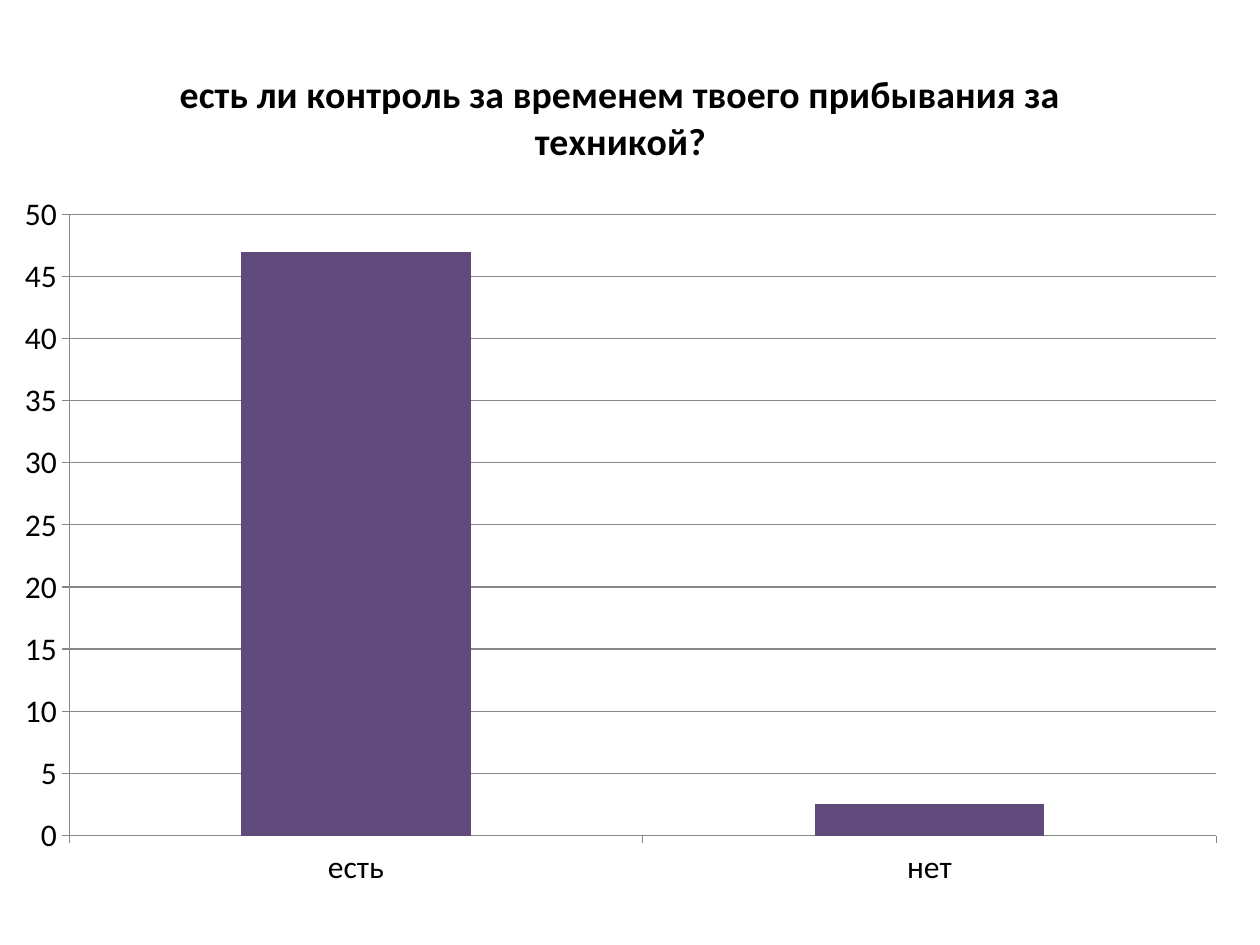
from dataclasses import dataclass

from pptx import Presentation
from pptx.chart.data import CategoryChartData
from pptx.dml.color import RGBColor
from pptx.enum.chart import XL_CHART_TYPE, XL_TICK_MARK
from pptx.util import Inches, Pt


@dataclass(frozen=True)
class Theme:
    """Hold the colours, font and type sizes."""
    face: str = "Calibri"
    ink: str = "000000"
    bar: str = "604A7B"
    grid: str = "868686"
    body: float = 18
    head: float = 21.6


THEME = Theme()
TITLE = "есть ли контроль за временем твоего прибывания за техникой?"
VOTES = {"есть": 47, "нет": 2.5}


def style(font, size=THEME.body, bold=False, color=THEME.ink):
    """Set the face, size, weight and colour of a font."""
    font.name = THEME.face
    font.size = Pt(size)
    font.bold = bold
    font.color.rgb = RGBColor.from_string(color)


def write(frame, text, **form):
    """Put formatted text in a text frame."""
    run = frame.paragraphs[0].add_run()
    run.text = text
    style(run.font, **form)


def rule(line):
    """Give an axis or grid line its thin grey stroke."""
    line.color.rgb = RGBColor.from_string(THEME.grid)
    line.width = Pt(0.75)


def add_votes(slide, left, top, width, height):
    """Place the column chart of answers in the given box."""
    data = CategoryChartData()
    data.categories = list(VOTES)
    data.add_series(TITLE, list(VOTES.values()))
    box = [Inches(side) for side in (left, top, width, height)]
    chart = slide.shapes.add_chart(XL_CHART_TYPE.COLUMN_STACKED, *box, data).chart
    style(chart.font)
    chart.has_legend = False
    chart.has_title = True
    chart.chart_title.include_in_layout = False
    write(chart.chart_title.text_frame, TITLE, size=THEME.head, bold=True)

    plot = chart.plots[0]
    plot.gap_width = 150
    plot.overlap = 100
    plot.vary_by_categories = False
    fill = plot.series[0].format.fill
    fill.solid()
    fill.fore_color.rgb = RGBColor.from_string(THEME.bar)

    for axis in (chart.category_axis, chart.value_axis):
        axis.major_tick_mark = XL_TICK_MARK.OUTSIDE
        axis.minor_tick_mark = XL_TICK_MARK.NONE
        rule(axis.format.line)
    scale = chart.value_axis
    scale.minimum_scale, scale.maximum_scale, scale.major_unit = 0, 50, 5
    scale.has_major_gridlines = True
    rule(scale.major_gridlines.format.line)


def main():
    """Build and save the slide."""
    deck = Presentation()
    deck.slide_width, deck.slide_height = Inches(10), Inches(7.5)
    slide = deck.slides.add_slide(deck.slide_layouts[6])
    add_votes(slide, 0, 0.29, 9.85, 6.88)
    deck.save("out.pptx")


if __name__ == "__main__":
    main()
